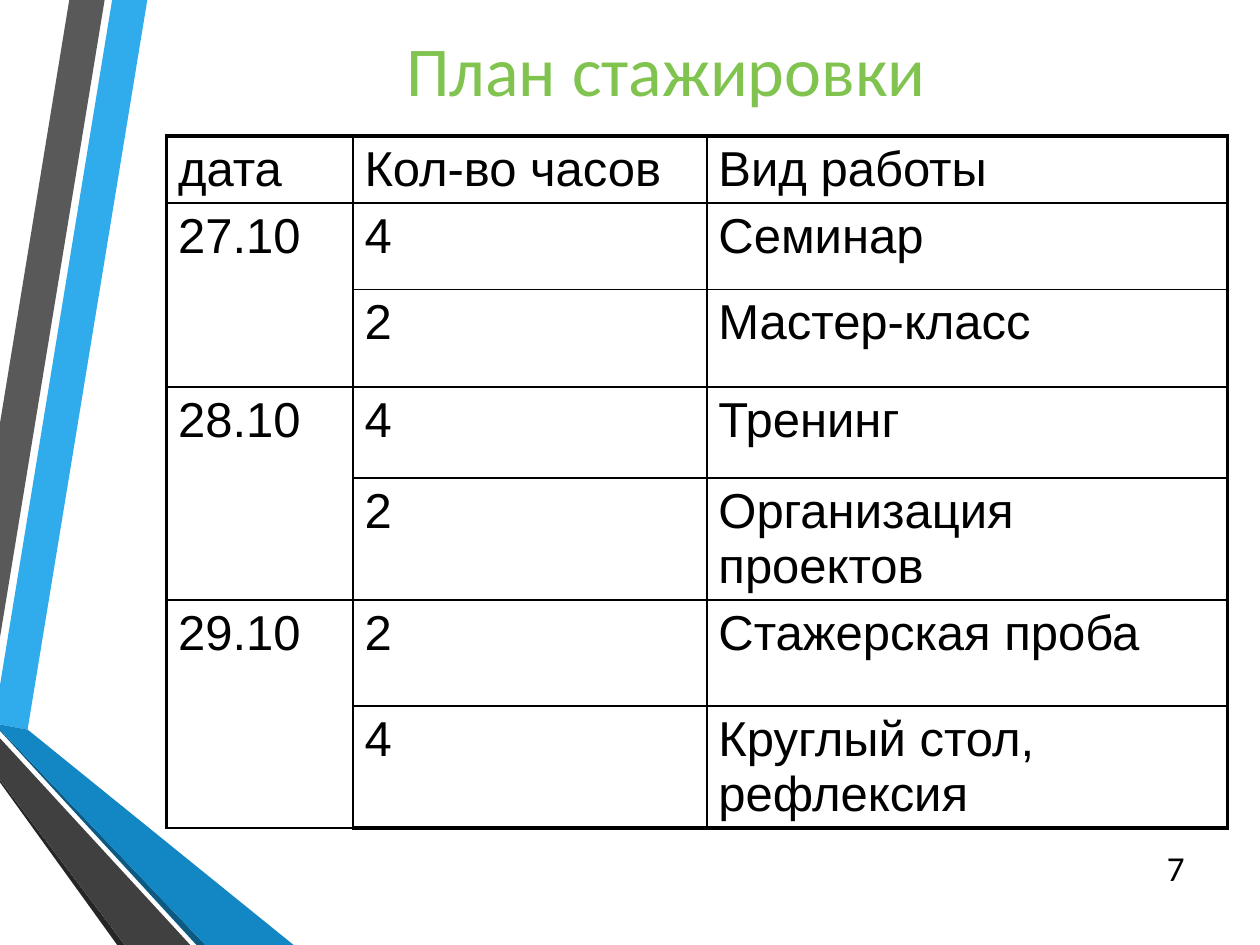
from lxml.etree import SubElement
from pptx import Presentation
from pptx.dml.color import RGBColor
from pptx.enum.text import MSO_ANCHOR, PP_ALIGN
from pptx.oxml.ns import qn
from pptx.util import Pt

# Content
TITLE = "План стажировки"
PAGE_NUMBER = "7"
HEADER = ("дата", "Кол-во часов", "Вид работы")
PLAN = [
    ("27.10", [("4", "Семинар"), ("2", "Мастер-класс")]),
    ("28.10", [("4", "Тренинг"), ("2", "Организация проектов")]),
    ("29.10", [("2", "Стажерская проба"), ("4", "Круглый стол, рефлексия")]),
]

# Layout in points
WIDTH, HEIGHT = 720, 540
TITLE_AREA = (77, 0, 607, 78)
NUMBER_AREA = (650, 481, 34, 29)
TABLE_LEFT, TABLE_TOP = 95.3, 77.6
COLUMN_WIDTHS = (106.5, 202.3, 297.5)
ROW_HEIGHTS = (38.5, 49.2, 56, 52, 69.5, 60.5, 69.5)
INNER_LINE, OUTER_LINE = 1, 2.25

# Ribbon pieces at the left edge: colour and corner points
RIBBONS = [
    ("30ACEC", [(0, 391.7), (0, 414), (15.8, 416.9), (84.2, 0), (64.1, 0)]),
    ("595959", [(59.8, 0), (39.6, 0), (0, 241.9), (0, 364.3)]),
    ("262626", [(0, 445.7), (0, 447.1), (67, HEIGHT), (71.3, HEIGHT)]),
    ("0C5A82", [(0, 416.9), (0, 417.6), (112.3, HEIGHT), (117.4, HEIGHT)]),
    ("1287C3", [(0, 416.9), (117.4, HEIGHT), (167.8, HEIGHT), (15.8, 416.9), (0, 414)]),
    ("404040", [(0, 445.7), (71.3, HEIGHT), (108.7, HEIGHT), (0, 421.9)]),
]

# Text formats
TITLE_FONT = {"name": "Calibri", "size": Pt(40), "color": "80C34F"}
NUMBER_FONT = {"name": "Calibri", "size": Pt(20), "color": "000000"}
TABLE_FONT = {"name": "Arial", "size": Pt(28), "color": "000000"}


def colour(hex_code):
    return RGBColor.from_string(hex_code)


def write(frame, text, font, align):
    para = frame.paragraphs[0]
    para.alignment = align
    span = para.add_run()
    span.text = text
    for key, value in font.items():
        if key == "color":
            span.font.color.rgb = colour(value)
        else:
            setattr(span.font, key, value)


def place(box, area):
    for key, value in zip(("left", "top", "width", "height"), area):
        setattr(box, key, Pt(value))


def add_ribbon(page, hex_code, corners):
    points = [(Pt(x), Pt(y)) for x, y in corners]
    builder = page.shapes.build_freeform(*points[0])
    builder.add_line_segments(points[1:], close=True)
    ribbon = builder.convert_to_shape()
    ribbon.shadow.inherit = False
    ribbon.fill.solid()
    ribbon.fill.fore_color.rgb = colour(hex_code)
    ribbon.line.fill.background()


def set_borders(cell, outer_sides):
    properties = cell._tc.get_or_add_tcPr()
    for side, is_outer in outer_sides.items():
        width = Pt(OUTER_LINE if is_outer else INNER_LINE)
        line = SubElement(properties, qn("a:ln" + side), w=str(width))
        fill = SubElement(line, qn("a:solidFill"))
        SubElement(fill, qn("a:srgbClr"), val="000000")


def add_plan_table(page):
    rows = [HEADER]
    for date, sessions in PLAN:
        for index, session in enumerate(sessions):
            rows.append((date if index == 0 else "", *session))
    last_row, last_column = len(rows) - 1, len(HEADER) - 1

    table = page.shapes.add_table(
        len(rows), len(HEADER), Pt(TABLE_LEFT), Pt(TABLE_TOP),
        Pt(sum(COLUMN_WIDTHS)), Pt(sum(ROW_HEIGHTS))).table
    table.first_row = table.horz_banding = False
    for column, width in zip(table.columns, COLUMN_WIDTHS):
        column.width = Pt(width)
    for row, height in zip(table.rows, ROW_HEIGHTS):
        row.height = Pt(height)

    # Cells, with a heavier line around the whole table
    for r, row in enumerate(rows):
        for c, text in enumerate(row):
            cell = table.cell(r, c)
            cell.margin_left = cell.margin_right = Pt(6.5)
            cell.margin_top = cell.margin_bottom = Pt(3.6)
            set_borders(cell, {"L": c == 0, "R": c == last_column,
                               "T": r == 0, "B": r == last_row})
            cell.fill.background()
            if text:
                write(cell.text_frame, text, TABLE_FONT, PP_ALIGN.LEFT)

    # One date cell for each day
    first = 1
    for date, sessions in PLAN:
        last = first + len(sessions) - 1
        table.cell(first, 0).merge(table.cell(last, 0))
        first = last + 1


def main():
    deck = Presentation()
    deck.slide_width, deck.slide_height = Pt(WIDTH), Pt(HEIGHT)
    page = deck.slides.add_slide(deck.slide_layouts[5])

    for hex_code, corners in RIBBONS:
        add_ribbon(page, hex_code, corners)

    # Title
    title = page.shapes.title
    place(title, TITLE_AREA)
    title.text_frame.vertical_anchor = MSO_ANCHOR.MIDDLE
    write(title.text_frame, TITLE, TITLE_FONT, PP_ALIGN.CENTER)

    add_plan_table(page)

    # Page number
    number = page.shapes.add_textbox(*map(Pt, NUMBER_AREA))
    number.text_frame.word_wrap = True
    number.text_frame.vertical_anchor = MSO_ANCHOR.MIDDLE
    write(number.text_frame, PAGE_NUMBER, NUMBER_FONT, PP_ALIGN.RIGHT)

    deck.save("out.pptx")


if __name__ == "__main__":
    main()
